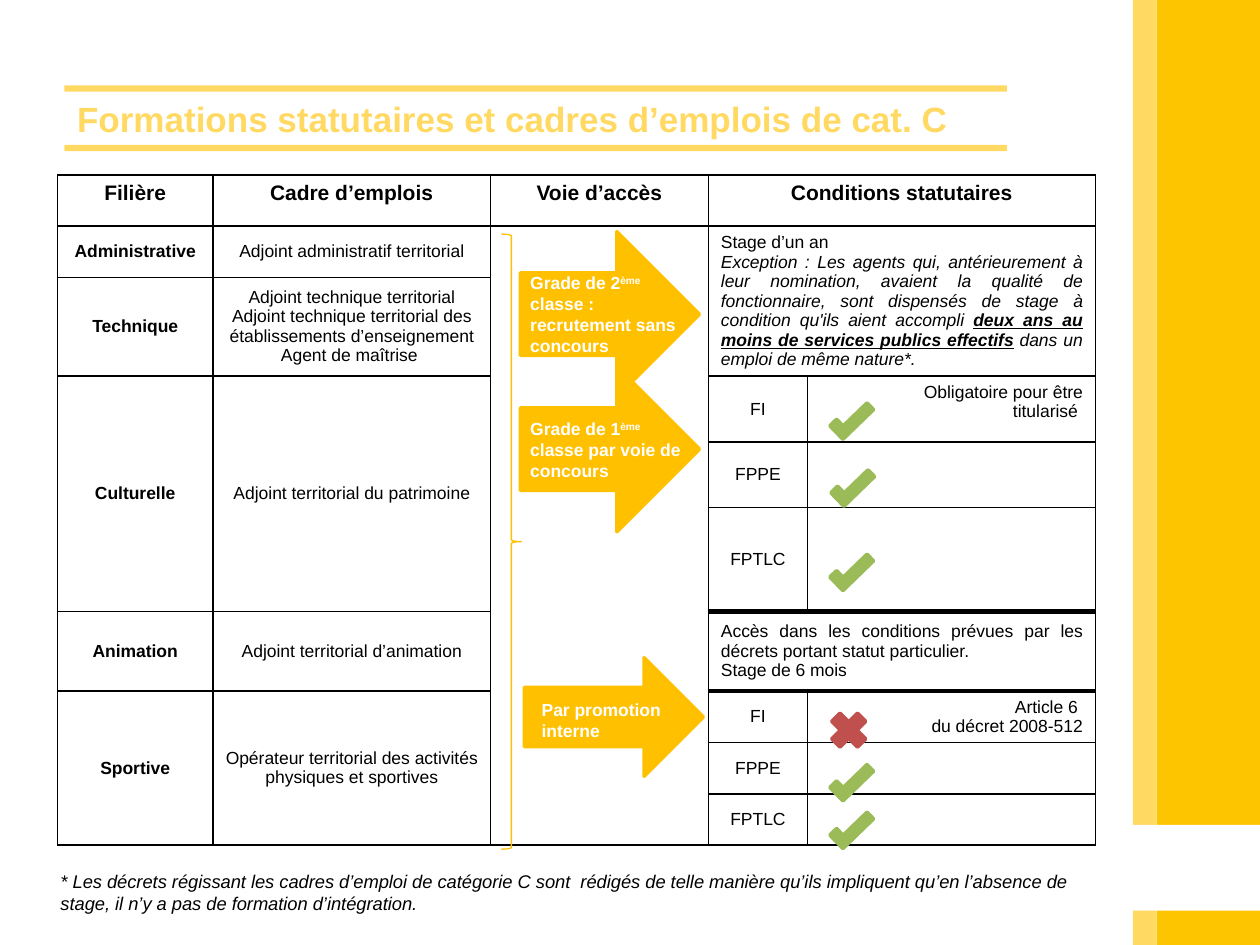
from lxml.etree import SubElement
from pptx import Presentation
from pptx.dml.color import RGBColor
from pptx.enum.shapes import MSO_SHAPE
from pptx.enum.text import MSO_ANCHOR, PP_ALIGN
from pptx.oxml.ns import qn
from pptx.util import Cm, Pt

GOLD, PALE_GOLD, AMBER = "FDC500", "FFD961", "FFC000"
GREEN, RED, WHITE, BLACK = "9BBB59", "C0504D", "FFFFFF", "000000"
LEFT, CENTER, RIGHT, JUSTIFY = PP_ALIGN.LEFT, PP_ALIGN.CENTER, PP_ALIGN.RIGHT, PP_ALIGN.JUSTIFY


def add_preset(preset, box, fill=None, line=None, width=2):
    shape = slide.shapes.add_shape(preset, *map(Cm, box))
    shape.shadow.inherit = False
    for part, colour in ((shape.fill, fill), (shape.line.fill, line)):
        if colour:
            part.solid()
            part.fore_color.rgb = RGBColor.from_string(colour)
        else:
            part.background()
    if line:
        shape.line.width = Pt(width)
    return shape


def write(frame, paragraphs, size, colour=BLACK, align=LEFT):
    """Each paragraph is a list of (text, style); styles: b, i, u, ^ (superscript)."""
    frame.word_wrap = True
    for number, runs in enumerate(paragraphs):
        paragraph = frame.paragraphs[0] if number == 0 else frame.add_paragraph()
        paragraph.alignment = align
        for text, style in runs:
            run = paragraph.add_run()
            run.text = text
            run.font.name, run.font.size = "Arial", Pt(size)
            run.font.color.rgb = RGBColor.from_string(colour)
            run.font.bold, run.font.italic = "b" in style, "i" in style
            run.font.underline = "u" in style
            if "^" in style:
                run.font._element.set("baseline", "30000")


presentation = Presentation()
presentation.slide_width, presentation.slide_height = Cm(25.4), Cm(19.05)
slide = presentation.slides.add_slide(presentation.slide_layouts[5])

# Side bands and title rules
for box, colour in (
    ((23.32, 0, 2.08, 19.05), GOLD),
    ((22.84, 0, 0.48, 19.05), PALE_GOLD),
    ((22.33, 16.63, 3.07, 1.73), WHITE),
    ((1.3, 1.72, 19, 0.13), PALE_GOLD),
    ((1.3, 2.92, 19, 0.13), PALE_GOLD),
):
    add_preset(MSO_SHAPE.RECTANGLE, box, colour)

# Title
title = slide.shapes.title
title.left, title.top, title.width, title.height = Cm(1.3), Cm(1.73), Cm(26), Cm(1.32)
title.text_frame.vertical_anchor = MSO_ANCHOR.MIDDLE
write(title.text_frame, [[("Formations statutaires et cadres d’emplois de cat. C", "b")]], 20, PALE_GOLD)

# Table grid
column_widths = (3.13, 5.6, 4.39, 2, 5.8)
row_heights = (1.03, 1.03, 1.99, 1.33, 1.32, 2.1, 1.6, 1.03, 0.97, 0.97)
table = slide.shapes.add_table(
    len(row_heights), len(column_widths), Cm(1.16), Cm(3.53),
    Cm(sum(column_widths)), Cm(sum(row_heights))).table
table.first_row = table.horz_banding = False
for column, width in zip(table.columns, column_widths):
    column.width = Cm(width)
for row, height in zip(table.rows, row_heights):
    row.height = Cm(height)

# Cell borders: thick rules above and below the internal promotion conditions
for r in range(len(row_heights)):
    for c in range(len(column_widths)):
        cell = table.cell(r, c)
        for side in ("L", "R", "T", "B"):
            thick = c >= 3 and (r, side) in ((5, "B"), (6, "T"), (6, "B"), (7, "T"))
            border = SubElement(cell._tc.get_or_add_tcPr(), qn("a:ln" + side), w=str(Pt(3 if thick else 1)))
            SubElement(SubElement(border, qn("a:solidFill")), qn("a:srgbClr"), val=BLACK)
        cell.fill.solid()
        cell.fill.fore_color.rgb = RGBColor.from_string(WHITE)

for first, last in (
    ((0, 3), (0, 4)), ((1, 2), (9, 2)), ((1, 3), (2, 4)), ((3, 0), (5, 0)),
    ((3, 1), (5, 1)), ((6, 3), (6, 4)), ((7, 0), (9, 0)), ((7, 1), (9, 1)),
):
    table.cell(*first).merge(table.cell(*last))

# Header row
for c, heading in enumerate(("Filière", "Cadre d’emplois", "Voie d’accès", "Conditions statutaires")):
    write(table.cell(0, c).text_frame, [[(heading, "b")]], 12, align=CENTER)

# Branches and their job frameworks
contents = []
for r, branch, frameworks in (
    (1, "Administrative", ["Adjoint administratif territorial"]),
    (2, "Technique", ["Adjoint technique territorial",
                      "Adjoint technique territorial des établissements d’enseignement",
                      "Agent de maîtrise "]),
    (3, "Culturelle", ["Adjoint territorial du patrimoine"]),
    (6, "Animation", ["Adjoint territorial d’animation"]),
    (7, "Sportive", ["Opérateur territorial des activités physiques et sportives"]),
):
    contents.append((r, 0, CENTER, [[(branch, "b")]]))
    contents.append((r, 1, CENTER, [[(framework, "")] for framework in frameworks]))

# Statutory conditions
for first_row in (3, 7):
    for offset, training in enumerate(("FI", "FPPE", "FPTLC")):
        contents.append((first_row + offset, 3, CENTER, [[(training, "")]]))
contents += [
    (1, 3, JUSTIFY, [
        [("Stage d’un an", "")],
        [("Exception : Les agents qui, antérieurement à leur nomination, avaient la qualité de "
          "fonctionnaire, sont dispensés de stage à condition qu'ils aient accompli ", "i"),
         ("deux ans au moins de services publics effectifs", "biu"),
         (" ", "bi"),
         ("dans un emploi de même nature*.", "i")]]),
    (3, 4, RIGHT, [[("Obligatoire pour être titularisé ", "")]]),
    (6, 3, JUSTIFY, [
        [("Accès dans les conditions prévues par les décrets portant statut particulier.", "")],
        [("Stage de 6 mois", "")]]),
    (7, 4, RIGHT, [[("Article 6 ", "")], [("du décret 2008-512", "")]]),
]
for r, c, align, paragraphs in contents:
    cell = table.cell(r, c)
    cell.vertical_anchor = MSO_ANCHOR.MIDDLE
    write(cell.text_frame, paragraphs, 10, align=align)
mandatory = table.cell(3, 4)
mandatory.vertical_anchor = MSO_ANCHOR.TOP
mandatory.margin_left = Cm(1.8)

# Access routes: arrow with its label on top
for arrow_box, label_box, runs in (
    ((10.49, 4.67, 3.61, 3.33), (10.44, 5.36, 3.66, 1.96),
     [("Grade de 2", "b"), ("ème", "b^"), (" classe : recrutement sans concours", "b")]),
    ((10.49, 7.39, 3.61, 3.33), (10.44, 8.31, 3.66, 1.55),
     [("Grade de 1", "b"), ("ème", "b^"), (" classe par voie de concours", "b")]),
    ((10.57, 13.26, 3.61, 2.39), (10.67, 13.97, 3, 1.12),
     [("Par promotion interne", "b")]),
):
    add_preset(MSO_SHAPE.RIGHT_ARROW, arrow_box, AMBER, AMBER)
    label = slide.shapes.add_textbox(*map(Cm, label_box))
    write(label.text_frame, [runs], 10, WHITE)

# Check marks and cross
for left, top in ((16.74, 8.23), (16.76, 9.58), (16.74, 11.28), (16.74, 15.52), (16.74, 16.48)):
    check = add_preset(MSO_SHAPE.CORNER, (left, top, 0.86, 0.38), GREEN, GREEN)
    check.rotation = 315.9
add_preset(MSO_SHAPE.MATH_MULTIPLY, (16.61, 14.22, 1, 1), RED, RED)

# Brace gathering the branches
add_preset(MSO_SHAPE.RIGHT_BRACE, (10.11, 4.72, 0.4, 12.4), line=AMBER, width=0.75)

# Footnote
footnote = slide.shapes.add_textbox(Cm(0.97), Cm(17.42), Cm(21.3), Cm(1.14))
write(footnote.text_frame, [[(
    "* Les décrets régissant les cadres d’emploi de catégorie C sont  rédigés de telle manière "
    "qu’ils impliquent qu’en l’absence de stage, il n’y a pas de formation d’intégration.", "i")]], 10.5)

presentation.save("out.pptx")
